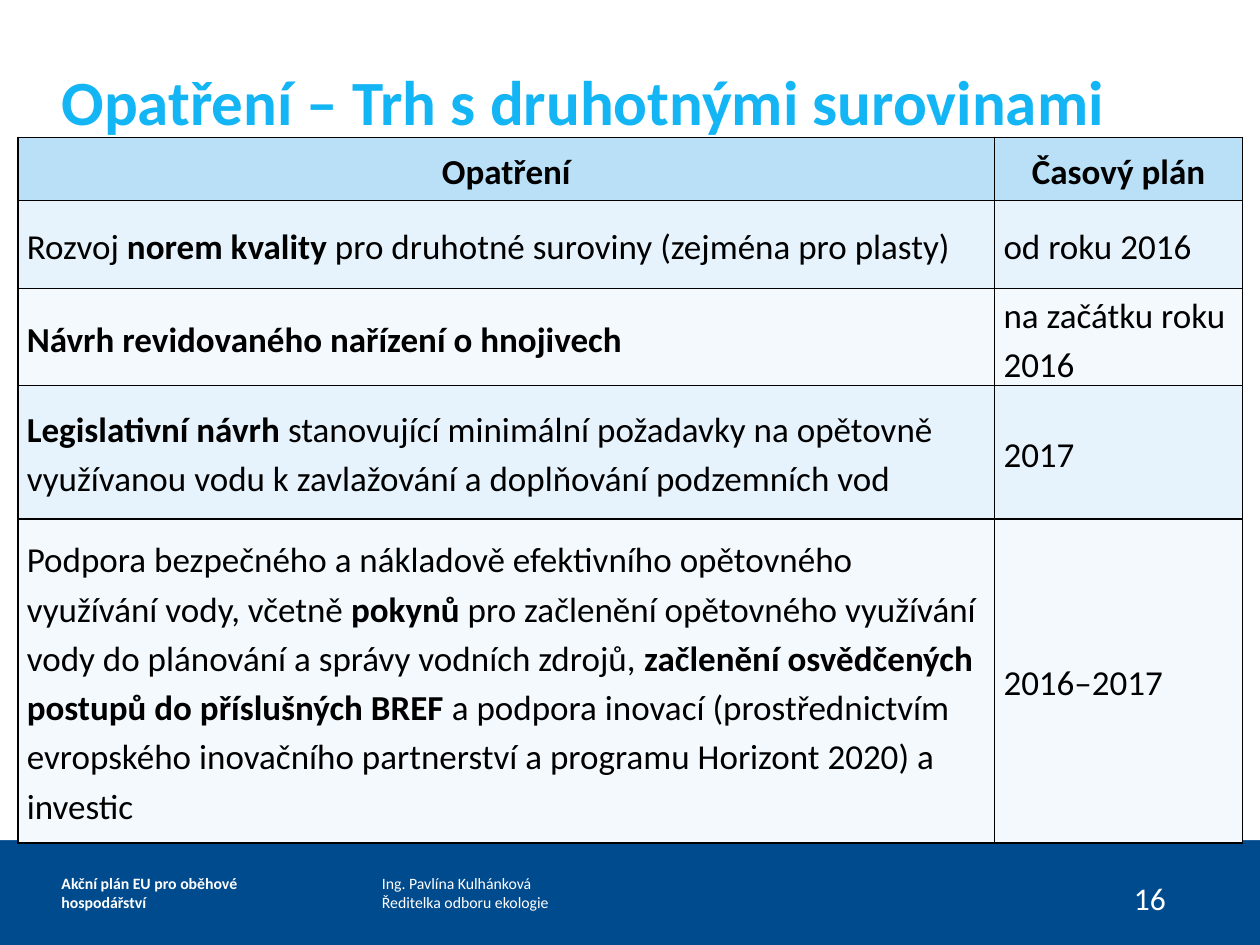
from dataclasses import dataclass

from lxml import etree
from pptx import Presentation
from pptx import util as u
from pptx.dml.color import RGBColor
from pptx.enum import shapes, text
from pptx.oxml.ns import qn


@dataclass(frozen=True)
class Theme:
    font: str = "Calibri"
    navy: str = "004B8D"
    sky: str = "13B5F4"
    white: str = "FFFFFF"
    black: str = "000000"
    header: str = "B9E0F7"
    bands: tuple = ("E6F3FC", "F3F9FD")
    title_size: int = 36
    table_size: int = 20
    number_size: int = 18
    footer_size: int = 9
    border: float = 1


THEME = Theme()
BOLD_MARK = "**"
COLUMN_WIDTHS = (19.69, 5)
ROW_HEIGHTS = (1.27, 1.78, 1.88, 2.69, 6.53)
HEADINGS = ("Opatření", "Časový plán")
MEASURES = (
    ("Rozvoj **norem kvality** pro druhotné suroviny (zejména pro plasty)", "od roku 2016"),
    ("**Návrh revidovaného nařízení o hnojivech**", "na začátku roku 2016"),
    ("**Legislativní návrh** stanovující minimální požadavky na opětovně "
     "využívanou vodu k zavlažování a doplňování podzemních vod", "2017"),
    ("Podpora bezpečného a nákladově efektivního opětovného využívání vody, včetně "
     "**pokynů** pro začlenění opětovného využívání vody do plánování a správy vodních zdrojů, "
     "**začlenění osvědčených postupů do příslušných BREF **a podpora inovací "
     "(prostřednictvím evropského inovačního partnerství a programu Horizont 2020) "
     "a investic", "2016–2017"),
)


def format_run(run, size, color, bold=False):
    run.font.name = THEME.font
    run.font.size = u.Pt(size)
    run.font.bold = bold
    run.font.color.rgb = RGBColor.from_string(color)


def add_label(slide, box, lines, size, color, bold=False, inset=0,
              anchor=text.MSO_ANCHOR.MIDDLE):
    shape = slide.shapes.add_textbox(*(u.Cm(length) for length in box))
    frame = shape.text_frame
    frame.word_wrap = True
    frame.vertical_anchor = anchor
    frame.margin_left = frame.margin_right = u.Cm(inset)
    frame.margin_top = frame.margin_bottom = u.Cm(inset / 2)
    frame.text = lines
    for paragraph in frame.paragraphs:
        for run in paragraph.runs:
            format_run(run, size, color, bold)


def add_background(slide, box):
    slide.background.fill.solid()
    slide.background.fill.fore_color.rgb = RGBColor.from_string(THEME.navy)
    panel = slide.shapes.add_shape(shapes.MSO_SHAPE.RECTANGLE,
                                   *(u.Cm(length) for length in box))
    panel.shadow.inherit = False
    panel.fill.solid()
    panel.fill.fore_color.rgb = RGBColor.from_string(THEME.white)
    panel.line.fill.background()


def add_footer(slide, box):
    left, top, width, height = box
    add_label(slide, (left + 1.24, top, 5.21, height),
              "Akční plán EU pro oběhové hospodářství",
              THEME.footer_size, THEME.white, bold=True)
    add_label(slide, (left + 7.7, top, 5, height),
              "Ing. Pavlína Kulhánková\nŘeditelka odboru ekologie",
              THEME.footer_size, THEME.white)
    add_label(slide, (left + width - 2.79, top + 0.66, 1.27, 1.02), "16",
              THEME.number_size, THEME.white, inset=0.25, anchor=text.MSO_ANCHOR.TOP)


def add_borders(cell):
    properties = cell._tc.get_or_add_tcPr()
    for position, side in enumerate(("lnL", "lnR", "lnT", "lnB")):
        line = etree.Element(qn(f"a:{side}"), w=str(u.Pt(THEME.border)))
        fill = etree.SubElement(line, qn("a:solidFill"))
        etree.SubElement(fill, qn("a:srgbClr"), val=THEME.black)
        properties.insert(position, line)


def fill_cell(cell, content, color, alignment):
    cell.fill.solid()
    cell.fill.fore_color.rgb = RGBColor.from_string(color)
    cell.vertical_anchor = text.MSO_ANCHOR.MIDDLE
    cell.margin_left = cell.margin_right = u.Cm(0.18)
    cell.margin_top = cell.margin_bottom = 0
    add_borders(cell)
    paragraph = cell.text_frame.paragraphs[0]
    paragraph.alignment = alignment
    paragraph.line_spacing = 1.15
    for index, piece in enumerate(content.split(BOLD_MARK)):
        if piece:
            run = paragraph.add_run()
            run.text = piece
            format_run(run, THEME.table_size, THEME.black, bold=index % 2 == 1)


def add_measures_table(slide, left, top):
    headings = tuple(f"{BOLD_MARK}{heading}{BOLD_MARK}" for heading in HEADINGS)
    rows = (headings, *MEASURES)
    table = slide.shapes.add_table(
        len(rows), len(COLUMN_WIDTHS), u.Cm(left), u.Cm(top),
        u.Cm(sum(COLUMN_WIDTHS)), u.Cm(sum(ROW_HEIGHTS))).table
    table.first_row = table.horz_banding = False
    for column, width in zip(table.columns, COLUMN_WIDTHS):
        column.width = u.Cm(width)
    for row_index, (row, height) in enumerate(zip(rows, ROW_HEIGHTS)):
        table.rows[row_index].height = u.Cm(height)
        is_header = row_index == 0
        color = THEME.header if is_header else THEME.bands[(row_index - 1) % 2]
        alignment = text.PP_ALIGN.CENTER if is_header else text.PP_ALIGN.LEFT
        for column_index, content in enumerate(row):
            fill_cell(table.cell(row_index, column_index), content, color, alignment)


def main():
    presentation = Presentation()
    presentation.slide_width = u.Cm(25.4)
    presentation.slide_height = u.Cm(19.05)
    slide = presentation.slides.add_slide(presentation.slide_layouts[6])
    add_background(slide, (0, 0, 25.4, 16.94))
    add_footer(slide, (0, 16.94, 25.4, 2.11))
    add_measures_table(slide, 0.36, 2.77)
    add_label(slide, (1.24, 1.24, 22.89, 1.55), "Opatření – Trh s druhotnými surovinami",
              THEME.title_size, THEME.sky, bold=True)
    presentation.save("out.pptx")


if __name__ == "__main__":
    main()
